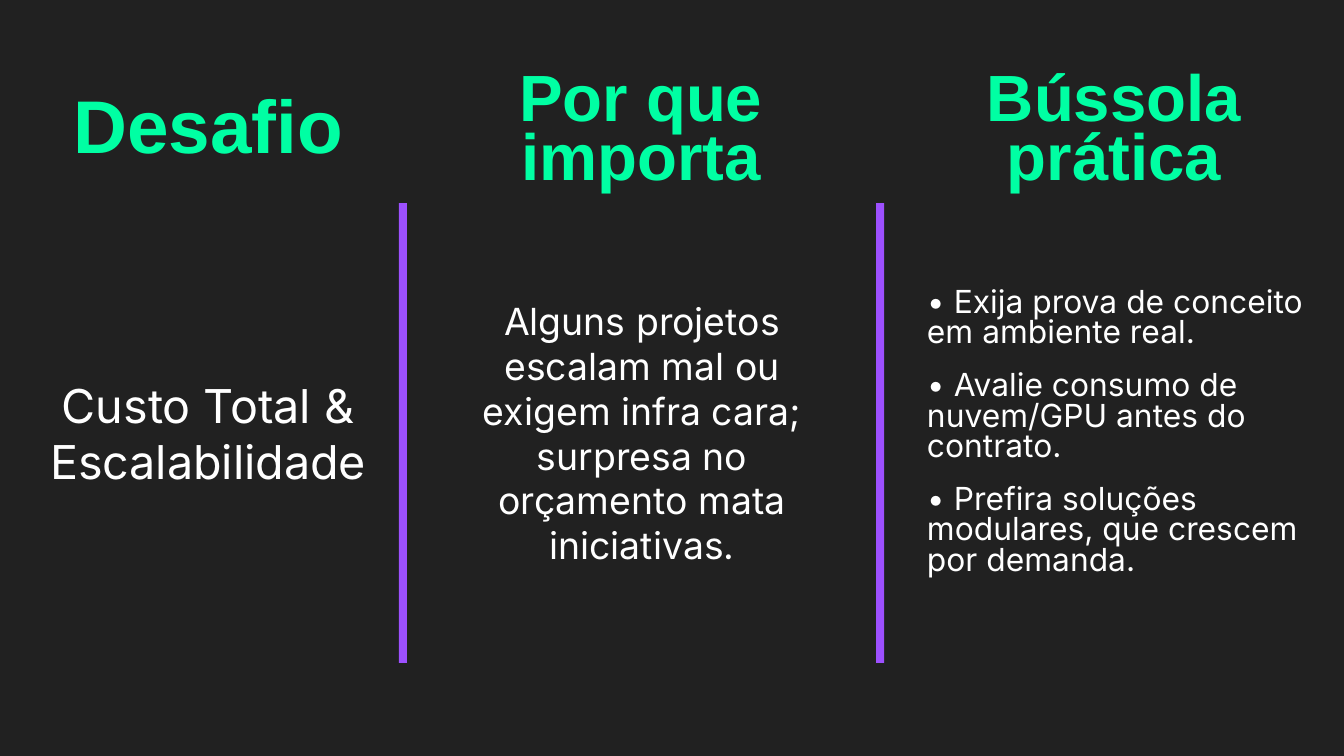
from pptx import Presentation
from pptx import util as u
from pptx.dml.color import RGBColor
from pptx.enum import shapes, text

BACKGROUND = RGBColor(0x21, 0x21, 0x21)
GREEN = RGBColor(0x00, 0xFF, 0xA3)
PURPLE = RGBColor(0x9D, 0x50, 0xFF)
WHITE = RGBColor(0xFF, 0xFF, 0xFF)

# Left, top, width, height in cm, then size and wording
HEADINGS = [
    ((0.99, 1.63, 5.89, 1.8), 40, "Desafio"),
    ((8.51, 1.14, 7.21, 2.77), 35, "Por que importa"),
    ((18.11, 1.14, 5.89, 2.77), 35, "Bússola prática"),
]
STATEMENTS = [
    ((0.58, 6.86, 6.71, 2.64), 25, "Custo Total & Escalabilidade"),
    ((8.26, 5.36, 7.75, 5.64), 20,
     "Alguns projetos escalam mal ou exigem infra cara; "
     "surpresa no orçamento mata iniciativas."),
]
ADVICE = [
    "• Exija prova de conceito em ambiente real.",
    "• Avalie consumo de nuvem/GPU antes do contrato.",
    "• Prefira soluções modulares, que crescem por demanda.",
]
DIVIDER_LEFTS = (7.54, 16.56)


def add_text(page, area, lines, size, color=WHITE, font="Inter", bold=False,
             align=text.PP_ALIGN.CENTER, spacing=1.0):
    box = page.shapes.add_textbox(*map(u.Cm, area))
    frame = box.text_frame
    frame.word_wrap = True
    frame.auto_size = text.MSO_AUTO_SIZE.SHAPE_TO_FIT_TEXT
    frame.vertical_anchor = text.MSO_ANCHOR.MIDDLE
    frame.margin_left = frame.margin_right = u.Cm(0.25)
    frame.margin_top = frame.margin_bottom = u.Cm(0.25)
    for index, line in enumerate(lines):
        para = frame.add_paragraph() if index else frame.paragraphs[0]
        para.alignment = align
        para.line_spacing = spacing
        para.space_before = u.Pt(12 if index else 0)
        span = para.add_run()
        span.text = line
        span.font.name = font
        span.font.size = u.Pt(size)
        span.font.bold = bold
        span.font.color.rgb = color
    para.space_after = u.Pt(6)


def add_divider(page, left):
    bar = page.shapes.add_shape(shapes.MSO_SHAPE.RECTANGLE, u.Cm(left),
                                u.Cm(3.84), u.Cm(0.15), u.Cm(8.69))
    bar.shadow.inherit = False
    bar.fill.solid()
    bar.fill.fore_color.rgb = PURPLE
    bar.line.fill.background()


def main():
    deck = Presentation()
    deck.slide_width, deck.slide_height = u.Cm(25.4), u.Cm(14.29)
    page = deck.slides.add_slide(deck.slide_layouts[6])
    page.background.fill.solid()
    page.background.fill.fore_color.rgb = BACKGROUND

    # Column dividers
    for left in DIVIDER_LEFTS:
        add_divider(page, left)

    # Column headings
    for area, size, heading in HEADINGS:
        add_text(page, area, [heading], size, GREEN, "Arial", bold=True,
                 spacing=0.75)

    # Challenge and reason, then the list of advice
    for area, size, statement in STATEMENTS:
        add_text(page, area, [statement], size)
    add_text(page, (17.27, 5.18, 7.75, 6.02), ADVICE, 17,
             align=text.PP_ALIGN.LEFT, spacing=0.8)

    deck.save("out.pptx")


if __name__ == "__main__":
    main()
